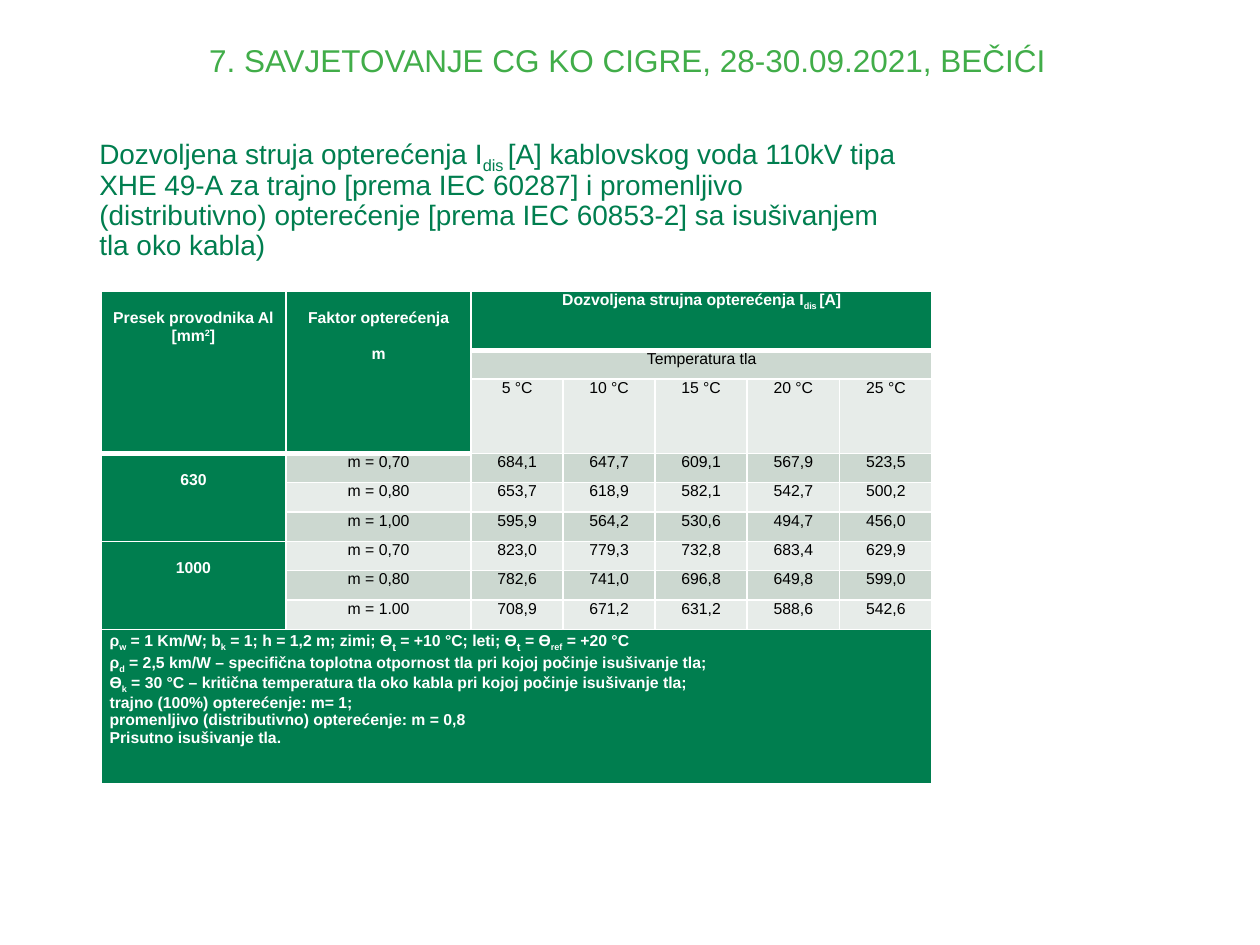
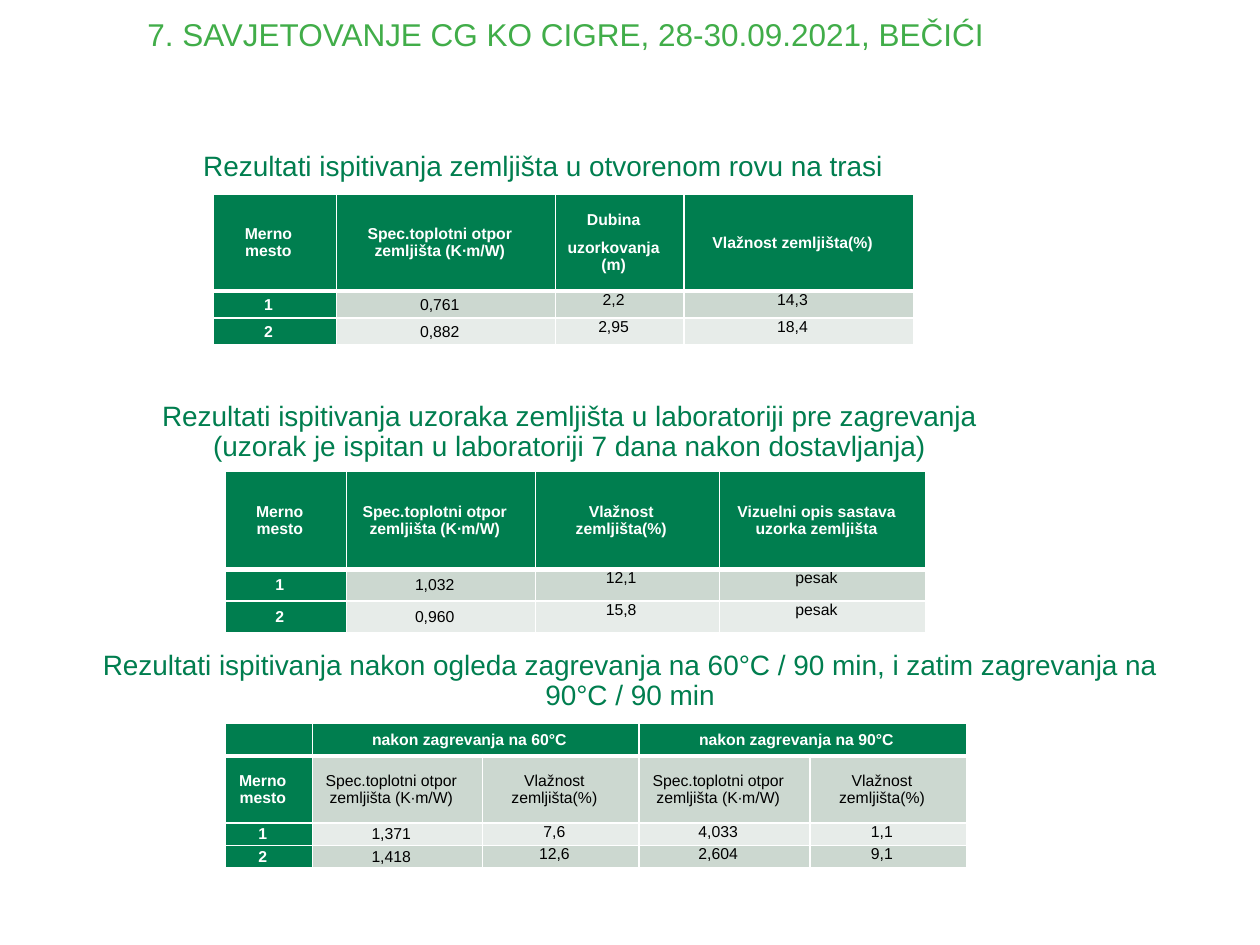
from dataclasses import dataclass
from typing import Any

from pptx import Presentation
from pptx.dml.color import RGBColor
from pptx.enum.text import MSO_ANCHOR, PP_ALIGN
from pptx.oxml import parse_xml
from pptx.oxml.ns import nsdecls
from pptx.util import Inches, Pt

# Slide grid: 100 columns by 75 rows
COLUMNS, ROWS = 100, 75
SLIDE_WIDTH, SLIDE_HEIGHT = Inches(10), Inches(7.5)

GREEN = RGBColor(0x00, 0x7E, 0x4F)
BRIGHT_GREEN = RGBColor(0x41, 0xAD, 0x49)
DARK_BAND = RGBColor(0xCC, 0xD8, 0xD0)
LIGHT_BAND = RGBColor(0xE7, 0xEC, 0xE9)
WHITE = RGBColor(0xFF, 0xFF, 0xFF)
BLACK = RGBColor(0x00, 0x00, 0x00)

FONT = "Arial"
TABLE_SIZE = 9
TABLE_LINE = Pt(10.35)
SUBSCRIPT_SIZES = {"t": 11}
THIN, THICK = Pt(1), Pt(3)
CONFERENCE = "7. SAVJETOVANJE CG KO CIGRE, 28-30.09.2021, BEČIĆI"

PLACE = "Merno mesto"
RESISTANCE = "Spec.toplotni otpor zemljišta (K∙m/W)"
MOISTURE = "Vlažnost zemljišta(%)"


@dataclass(frozen=True)
class Heading:
    text: str
    left: float
    top: float
    width: float = 86.2
    height: float = 8.2
    align: PP_ALIGN = PP_ALIGN.CENTER
    anchor: MSO_ANCHOR = MSO_ANCHOR.MIDDLE
    size: float = 16
    color: RGBColor = GREEN


@dataclass(frozen=True)
class Span:
    row: int
    column: int
    height: int
    width: int


@dataclass(frozen=True)
class Grid:
    """A table; a blank line in a cell's text becomes spacing."""
    left: float
    top: float
    widths: list[float]
    heights: list[float]
    cells: list[list[str]]
    spans: tuple[Span, ...] = ()
    middle_rows: int = 1  # leading rows centred vertically
    middle_columns: int = 2  # leading columns centred vertically
    space_after: float = 6
    right_inset: float = 0.17
    left_aligned_row: int = -1

    def owners(self) -> dict[tuple[int, int], tuple[int, int]]:
        """Map each cell to the top left cell of its merged area."""
        owner = {(r, c): (r, c) for r in range(len(self.heights))
                 for c in range(len(self.widths))}
        for s in self.spans:
            for r in range(s.row, s.row + s.height):
                for c in range(s.column, s.column + s.width):
                    owner[r, c] = (s.row, s.column)
        return owner


def col(count: float) -> int:
    return round(SLIDE_WIDTH * count / COLUMNS)


def row(count: float) -> int:
    return round(SLIDE_HEIGHT * count / ROWS)


def apply(target: Any, values: dict[str, Any]) -> None:
    for name, value in values.items():
        setattr(target, name, value)


def add_runs(paragraph: Any, text: str, size: float, color: RGBColor, bold: bool) -> None:
    """Write text in which ~x~ is a subscript and ~^x~ a superscript."""
    for index, piece in enumerate(text.split("~")):
        if not piece:
            continue
        run = paragraph.add_run()
        run.text = piece.removeprefix("^")
        run_size = size
        if index % 2:
            run.font._element.set("baseline", "30000" if piece[0] == "^" else "-25000")
            run_size = SUBSCRIPT_SIZES.get(piece, size)
        apply(run.font, {"name": FONT, "size": Pt(run_size), "bold": bold})
        run.font.color.rgb = color


def add_heading(slide: Any, heading: Heading) -> None:
    frame = slide.shapes.add_textbox(col(heading.left), row(heading.top),
                                     col(heading.width), row(heading.height)).text_frame
    apply(frame, {"word_wrap": True, "vertical_anchor": heading.anchor})
    for index, line in enumerate(heading.text.split("\n")):
        paragraph = frame.add_paragraph() if index else frame.paragraphs[0]
        apply(paragraph, {"alignment": heading.align, "line_spacing": 0.9})
        add_runs(paragraph, line, heading.size, heading.color, False)


def add_conference(slide: Any, left: float, top: float) -> None:
    add_heading(slide, Heading(CONFERENCE, left, top, 89.8, 4.7,
                               anchor=MSO_ANCHOR.BOTTOM, size=18, color=BRIGHT_GREEN))


def set_borders(cell: Any, top: int, bottom: int) -> None:
    properties = cell._tc.get_or_add_tcPr()
    widths = {"lnL": THIN, "lnR": THIN, "lnT": top, "lnB": bottom}
    for index, (side, width) in enumerate(widths.items()):
        properties.insert(index, parse_xml(
            f'<a:{side} {nsdecls("a")} w="{int(width)}"><a:solidFill>'
            f'<a:srgbClr val="{WHITE}"/></a:solidFill></a:{side}>'))


def write_cell(cell: Any, text: str, align: PP_ALIGN, after: float,
               color: RGBColor, bold: bool) -> None:
    frame = cell.text_frame
    if not text:
        frame.paragraphs[0]._p.get_or_add_endParaRPr().set("sz", str(TABLE_SIZE * 100))
        return
    body = text.lstrip("\n")
    cell.margin_top = TABLE_LINE * (len(text) - len(body))
    blank_lines, first = 0, True
    for line in body.split("\n"):
        if not line:
            blank_lines += 1
            continue
        paragraph = frame.paragraphs[0] if first else frame.add_paragraph()
        apply(paragraph, {"alignment": align, "space_after": Pt(after)})
        if blank_lines:
            paragraph.space_before = TABLE_LINE * blank_lines
        add_runs(paragraph, line, TABLE_SIZE, color, bold)
        blank_lines, first = 0, False


def add_grid(slide: Any, grid: Grid) -> None:
    table = slide.shapes.add_table(
        len(grid.heights), len(grid.widths), col(grid.left), row(grid.top),
        col(sum(grid.widths)), row(sum(grid.heights))).table
    for column, width in zip(table.columns, grid.widths):
        column.width = col(width)
    for line, height in zip(table.rows, grid.heights):
        line.height = row(height)

    owner = grid.owners()
    for (r, c), (first_row, first_column) in owner.items():
        cell = table.cell(r, c)
        green = first_row == 0 or first_column == 0
        middle = r < grid.middle_rows or c < grid.middle_columns
        apply(cell, {
            "margin_left": Inches(0.07), "margin_right": Inches(grid.right_inset),
            "margin_top": 0, "margin_bottom": 0,
            "vertical_anchor": MSO_ANCHOR.MIDDLE if middle else MSO_ANCHOR.TOP})
        cell.fill.solid()
        cell.fill.fore_color.rgb = GREEN if green else DARK_BAND if r % 2 else LIGHT_BAND
        # A thick rule closes the header row
        below_header = r > 0 and first_row > 0 and owner[r - 1, c][0] == 0
        set_borders(cell, THICK if below_header else THIN, THICK if first_row == 0 else THIN)
        text = grid.cells[r][c] if (r, c) == (first_row, first_column) else ""
        align = PP_ALIGN.LEFT if r == grid.left_aligned_row else PP_ALIGN.CENTER
        write_cell(cell, text, align, grid.space_after, WHITE if green else BLACK, green)
    for s in grid.spans:
        table.cell(s.row, s.column).merge(
            table.cell(s.row + s.height - 1, s.column + s.width - 1))


# Slide 1: permitted load currents
LOAD_HEADING = Heading(
    "Dozvoljena struja opterećenja I~dis ~[A] kablovskog voda 110kV tipa XHE 49-A za trajno "
    "[prema IEC 60287] i promenljivo (distributivno) opterećenje [prema IEC 60853-2] "
    "sa isušivanjem tla oko kabla)",
    6.9, 11.7, width=65.6, align=PP_ALIGN.LEFT)

LOAD_NOTES = "\n".join([
    "ρ~w~ = 1 Km/W; b~k~ = 1; h = 1,2 m; zimi; Ɵ~t~ = +10 °C; leti; Ɵ~t~ = Ɵ~ref~ = +20 °C",
    "ρ~d~ = 2,5 km/W – specifična toplotna otpornost tla pri kojoj počinje isušivanje tla;",
    "Ɵ~k~ = 30 °C – kritična temperatura tla oko kabla pri kojoj počinje isušivanje tla;",
    "trajno (100%) opterećenje: m= 1;",
    "promenljivo (distributivno) opterećenje: m = 0,8",
    "Prisutno isušivanje tla.",
])

LOAD_GRID = Grid(
    8, 23.1, [14.7, 14.7, 7.3, 7.3, 7.3, 7.35, 7.35],
    [4.7, 2.3, 5.6] + [2.33] * 6 + [12.3],
    [
        ["\nPresek provodnika Al\n[mm~^2~]", "\nFaktor opterećenja\n\nm",
         "Dozvoljena strujna opterećenja I~dis ~[A]"],
        ["", "", "Temperatura tla"],
        ["", "", "5 °C", "10 °C", "15 °C", "20 °C", "25 °C"],
        ["\n630", "m = 0,70", "684,1", "647,7", "609,1", "567,9", "523,5"],
        ["", "m = 0,80", "653,7", "618,9", "582,1", "542,7", "500,2"],
        ["", "m = 1,00", "595,9", "564,2", "530,6", "494,7", "456,0"],
        ["\n1000", "m = 0,70", "823,0", "779,3", "732,8", "683,4", "629,9"],
        ["", "m = 0,80", "782,6", "741,0", "696,8", "649,8", "599,0"],
        ["", "m = 1.00", "708,9", "671,2", "631,2", "588,6", "542,6"],
        [LOAD_NOTES],
    ],
    spans=(Span(0, 0, 3, 1), Span(0, 1, 3, 1), Span(0, 2, 1, 5), Span(1, 2, 1, 5),
           Span(3, 0, 3, 1), Span(6, 0, 3, 1), Span(9, 0, 1, 7)),
    middle_rows=0, middle_columns=0, space_after=0, right_inset=0.07, left_aligned_row=9)

# Slide 2: soil test results
SOIL_HEADINGS = [
    Heading("Rezultati ispitivanja zemljišta u otvorenom rovu na trasi", 0, 9.2),
    Heading("Rezultati ispitivanja uzoraka zemljišta u laboratoriji pre zagrevanja\n"
            "(uzorak je ispitan u laboratoriji 7 dana nakon dostavljanja)", 2.1, 30.2),
    Heading("Rezultati ispitivanja nakon ogleda zagrevanja na 60°C / 90 min, "
            "i zatim zagrevanja na 90°C / 90 min", 6.9, 50),
]

SOIL_GRIDS = [
    Grid(16.9, 15.4, [9.8, 17.4, 10.2, 18.2], [7.7, 2.15, 2.15], [
        [PLACE, RESISTANCE, "Dubina\nuzorkovanja (m)", MOISTURE],
        ["1", "0,761", "2,2", "14,3"],
        ["2", "0,882", "2,95", "18,4"],
    ]),
    Grid(17.9, 37.4, [9.6, 15, 14.6, 16.4], [7.8, 2.5, 2.5], [
        [PLACE, RESISTANCE, MOISTURE, "Vizuelni opis sastava uzorka zemljišta"],
        ["1", "1,032", "12,1", "pesak"],
        ["2", "0,960", "15,8", "pesak"],
    ]),
    Grid(17.9, 57.4, [6.9, 13.5, 12.4, 13.6, 12.4], [2.6, 5.3, 1.8, 1.8], [
        ["", "nakon zagrevanja na 60°C", "", "nakon zagrevanja na 90°C", ""],
        [PLACE] + [RESISTANCE, MOISTURE] * 2,
        ["1", "1,371", "7,6", "4,033", "1,1"],
        ["2", "1,418", "12,6", "2,604", "9,1"],
    ], spans=(Span(0, 1, 1, 2), Span(0, 3, 1, 2)), middle_rows=2),
]


def main() -> None:
    presentation = Presentation()
    apply(presentation, {"slide_width": SLIDE_WIDTH, "slide_height": SLIDE_HEIGHT})
    blank = presentation.slide_layouts[6]

    load_slide = presentation.slides.add_slide(blank)
    add_heading(load_slide, LOAD_HEADING)
    add_conference(load_slide, 4.9, 2.1)
    add_grid(load_slide, LOAD_GRID)

    soil_slide = presentation.slides.add_slide(blank)
    add_conference(soil_slide, 0, 0)
    for heading, grid in zip(SOIL_HEADINGS, SOIL_GRIDS):
        add_heading(soil_slide, heading)
        add_grid(soil_slide, grid)

    presentation.save("out.pptx")


if __name__ == "__main__":
    main()
